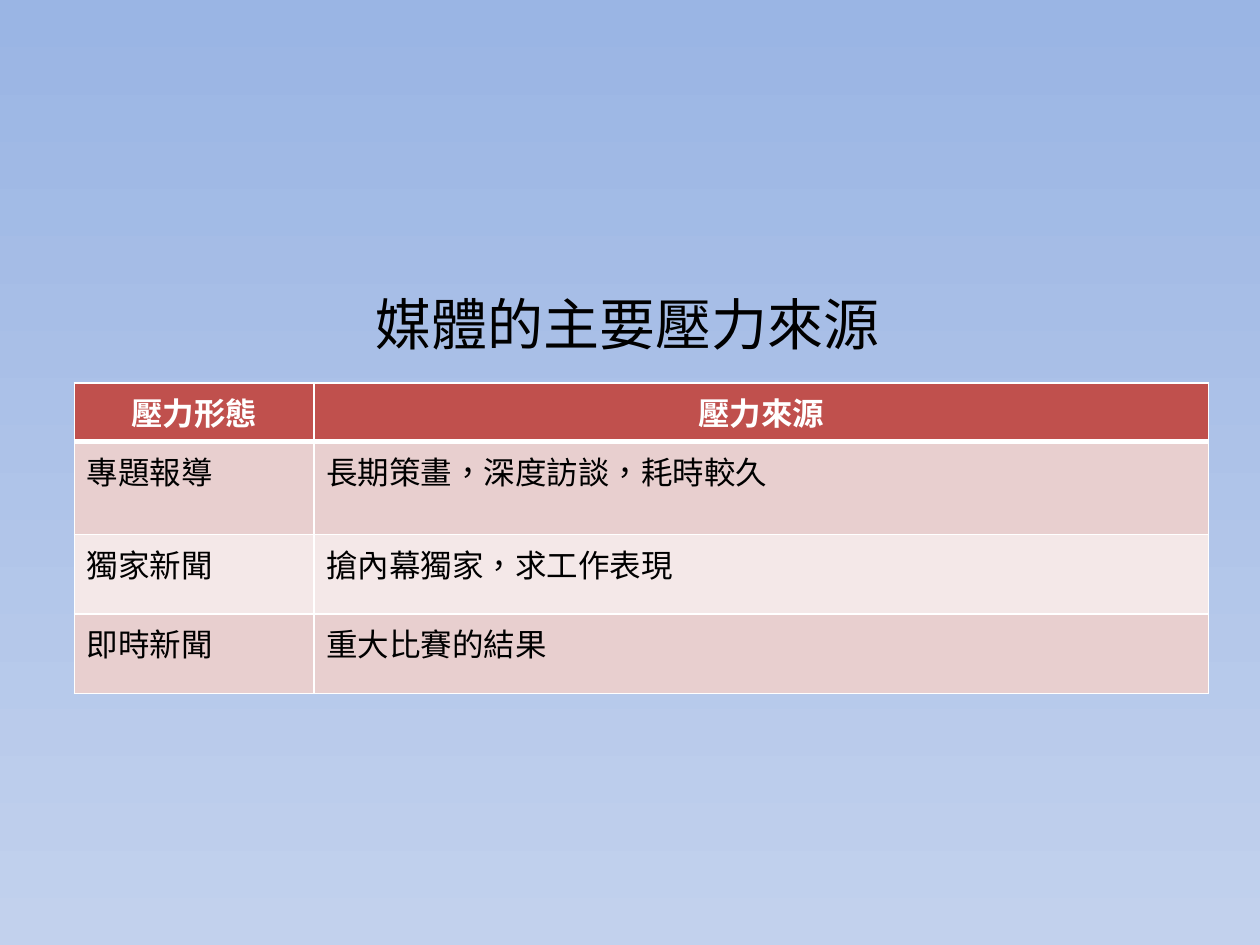
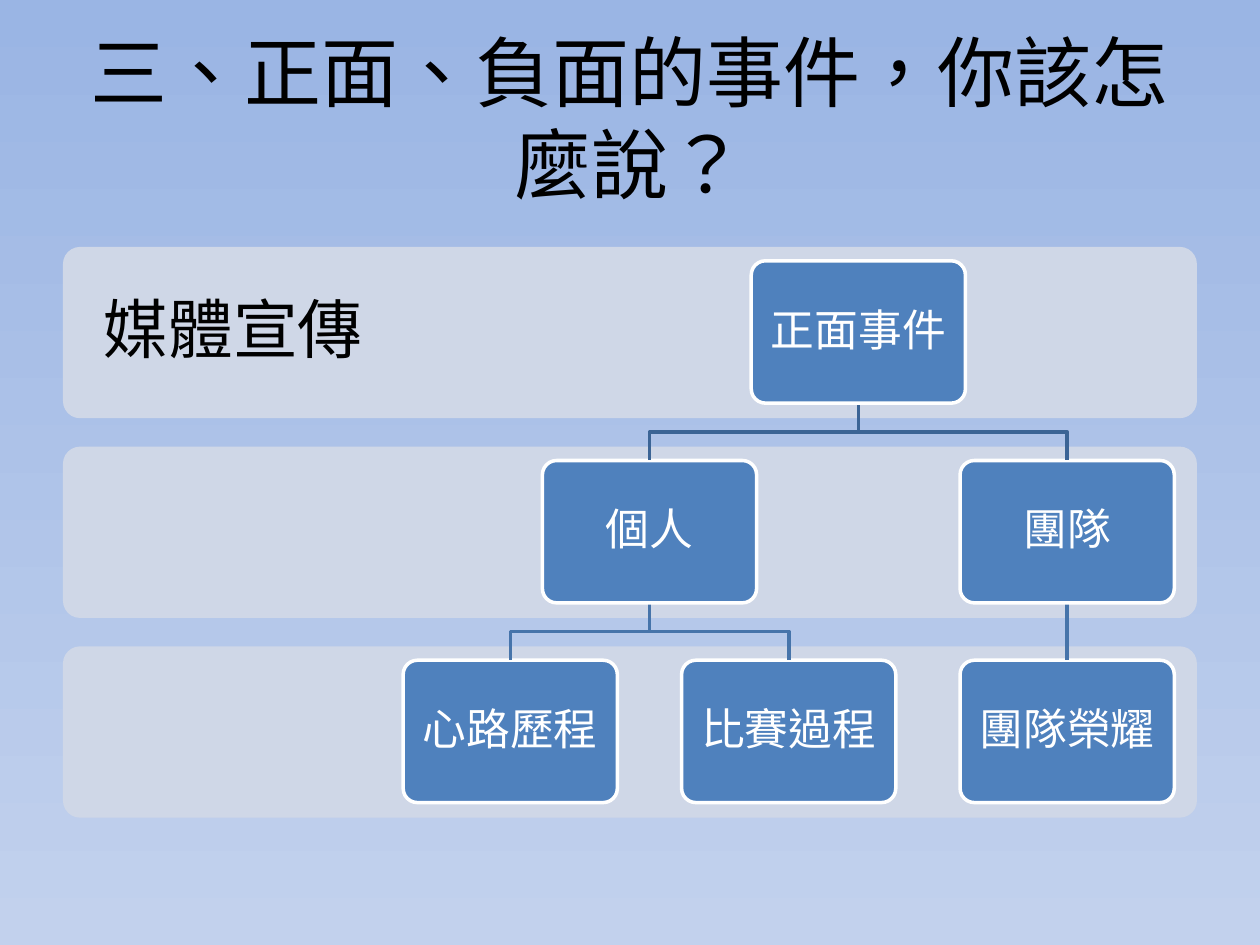
import pptx
import pptx.dml.color
import pptx.enum.lang
import pptx.enum.shapes
import pptx.enum.text
import pptx.util
from lxml import etree
from pptx.oxml.ns import qn

Inches = pptx.util.Inches
Align = pptx.enum.text.PP_ALIGN
Anchor = pptx.enum.text.MSO_ANCHOR
ShapeType = pptx.enum.shapes.MSO_SHAPE

BACKGROUND = ("9AB5E4", "C2D1ED")
WHITE, BLACK = "FFFFFF", "000000"
HEADER_FILL = "C0504D"
ROW_FILLS = ("E8CFCF", "F4E8E8")
BAND_FILL, NODE_FILL = "CFD7E7", "4F81BD"
BRANCH_COLOURS = ("3B6495", "4674AA")

SOURCES_TITLE = "媒體的主要壓力來源"
SOURCES = [
    ("壓力形態", "壓力來源"),
    ("專題報導", "長期策畫，深度訪談，耗時較久"),
    ("獨家新聞", "搶內幕獨家，求工作表現"),
    ("即時新聞", "重大比賽的結果"),
]
COLUMN_WIDTHS = (1.9, 7.1)
ROW_HEIGHTS = (0.46, 0.74, 0.63, 0.63)

EVENTS_TITLE = "三、正面、負面的事件，你該怎麼說？"
BAND_LABELS = ("媒體宣傳", None, None)
EVENT_TREE = ("正面事件", [
    ("個人", [("心路歷程", []), ("比賽過程", [])]),
    ("團隊", [("團隊榮耀", [])]),
])

BAND_LEFT, BAND_TOP, BAND_WIDTH, BAND_HEIGHT = 0.5, 1.96, 9, 1.36
LEVEL_STEP = 1.585
NODE_WIDTH, NODE_HEIGHT, NODE_INSET = 1.7, 1.13, 0.11
FIRST_LEAF, LEAF_STEP = 4.05, 2.21


def colour(value):
    """Return the colour for a hex string."""
    return pptx.dml.color.RGBColor.from_string(value)


def set_all(target, values):
    """Set every attribute named in a dict."""
    for name, value in values.items():
        setattr(target, name, value)


def write(frame, text, size, hex_colour, font="Calibri", bold=False,
          align=Align.CENTER, anchor=Anchor.MIDDLE, inset=0.1, spacing=1.0):
    """Write one formatted paragraph into a text frame."""
    set_all(frame, {
        "word_wrap": True, "auto_size": pptx.enum.text.MSO_AUTO_SIZE.NONE,
        "vertical_anchor": anchor,
        "margin_left": Inches(inset), "margin_right": Inches(inset),
        "margin_top": Inches(inset / 2), "margin_bottom": Inches(inset / 2),
    })
    write_paragraph(frame.paragraphs[0], text, size, hex_colour, font, bold, align, spacing)


def write_paragraph(paragraph, text, size, hex_colour, font, bold, align, spacing=1.0):
    """Add one formatted run to a paragraph."""
    set_all(paragraph, {"alignment": align, "line_spacing": spacing})
    run = paragraph.add_run()
    run.text = text
    set_all(run.font, {
        "name": font, "size": pptx.util.Pt(size), "bold": bold,
        "language_id": pptx.enum.lang.MSO_LANGUAGE_ID.TRADITIONAL_CHINESE,
    })
    run.font.color.rgb = colour(hex_colour)


def add_titled_slide(presentation, text, box, size, **formats):
    """Add a title-only slide with its title placed in a box."""
    slide = presentation.slides.add_slide(presentation.slide_layouts[5])
    title = slide.shapes.title
    set_all(title, dict(zip(("left", "top", "width", "height"), map(Inches, box))))
    write(title.text_frame, text, size, BLACK, **formats)
    return slide


def set_borders(cell, widths):
    """Draw white cell borders with a point width for each side."""
    properties = cell._tc.get_or_add_tcPr()
    for side, width in widths.items():
        line = etree.SubElement(properties, qn(f"a:ln{side}"), w=str(pptx.util.Pt(width)))
        fill = etree.SubElement(line, qn("a:solidFill"))
        etree.SubElement(fill, qn("a:srgbClr"), val=WHITE)


def add_sources_table(slide):
    """Add the table of pressure types and their sources."""
    table = slide.shapes.add_table(
        len(SOURCES), len(COLUMN_WIDTHS), Inches(0.59), Inches(3.04),
        Inches(sum(COLUMN_WIDTHS)), Inches(sum(ROW_HEIGHTS))).table
    for column, width in zip(table.columns, COLUMN_WIDTHS):
        column.width = Inches(width)
    for index, (row, height, texts) in enumerate(zip(table.rows, ROW_HEIGHTS, SOURCES)):
        row.height = Inches(height)
        header = index == 0
        for cell, text in zip(row.cells, texts):
            set_borders(cell, {"L": 1, "R": 1, "T": 3 if index == 1 else 1,
                               "B": 3 if header else 1})
            cell.fill.solid()
            cell.fill.fore_color.rgb = colour(
                HEADER_FILL if header else ROW_FILLS[(index - 1) % 2])
            write_paragraph(cell.text_frame.paragraphs[0], text, 18,
                            WHITE if header else BLACK, "Arial", header,
                            Align.CENTER if header else Align.LEFT)


def add_rounded_box(slide, left, top, width, height, fill):
    """Add a rounded rectangle without outline or shadow."""
    shape = slide.shapes.add_shape(
        ShapeType.ROUNDED_RECTANGLE, *map(Inches, (left, top, width, height)))
    shape.adjustments[0] = 0.1
    shape.shadow.inherit = False
    shape.fill.solid()
    shape.fill.fore_color.rgb = colour(fill)
    shape.line.fill.background()
    return shape


def set_line(shape, hex_colour):
    """Give a shape a two-point line."""
    shape.line.color.rgb = colour(hex_colour)
    shape.line.width = pptx.util.Pt(2)


def add_bands(slide):
    """Add one band for each tree level, with its label."""
    for level, label in enumerate(BAND_LABELS):
        top = BAND_TOP + level * LEVEL_STEP
        add_rounded_box(slide, BAND_LEFT, top, BAND_WIDTH, BAND_HEIGHT, BAND_FILL)
        if label:
            box = slide.shapes.add_textbox(
                *map(Inches, (BAND_LEFT, top, 2.7, BAND_HEIGHT)))
            write(box.text_frame, label, 37, BLACK, inset=0.29, spacing=0.9)


def add_branch(slide, start_x, start_y, end_x, end_y, hex_colour):
    """Join a node to its child by a straight or a bent line."""
    if start_x == end_x:
        branch = slide.shapes.add_connector(
            pptx.enum.shapes.MSO_CONNECTOR.STRAIGHT,
            *map(Inches, (start_x, start_y, end_x, end_y)))
        etree.SubElement(branch._element.spPr, qn("a:effectLst"))
    else:
        middle = (start_y + end_y) / 2
        builder = slide.shapes.build_freeform(Inches(start_x), Inches(start_y))
        builder.add_line_segments(
            [(Inches(x), Inches(y)) for x, y in
             ((start_x, middle), (end_x, middle), (end_x, end_y))], close=False)
        branch = builder.convert_to_shape()
        branch.shadow.inherit = False
        branch.fill.background()
    set_line(branch, hex_colour)


def add_tree(slide, node, leaf_centres, level=0):
    """Add a node above its children and return its centre."""
    text, children = node
    centres = [add_tree(slide, child, leaf_centres, level + 1) for child in children]
    centre = (centres[0] + centres[-1]) / 2 if centres else next(leaf_centres)
    top = BAND_TOP + NODE_INSET + level * LEVEL_STEP
    for child_centre in centres:
        add_branch(slide, centre, top + NODE_HEIGHT, child_centre, top + LEVEL_STEP,
                   BRANCH_COLOURS[level])
    shape = add_rounded_box(slide, centre - NODE_WIDTH / 2, top,
                            NODE_WIDTH, NODE_HEIGHT, NODE_FILL)
    set_line(shape, WHITE)
    write(shape.text_frame, text, 25, WHITE, spacing=0.9)
    return centre


def main():
    """Build both slides and save them."""
    presentation = pptx.Presentation()
    set_all(presentation, {"slide_width": Inches(10), "slide_height": Inches(7.5)})
    fill = presentation.slide_master.background.fill
    fill.gradient()
    fill.gradient_angle = 270
    for stop, value, position in zip(fill.gradient_stops, BACKGROUND, (0, 1)):
        stop.color.rgb = colour(value)
        stop.position = position

    sources_slide = add_titled_slide(
        presentation, SOURCES_TITLE, (2.88, 2.25, 4.24, 0.64), 32,
        align=Align.LEFT, anchor=Anchor.TOP)
    add_sources_table(sources_slide)

    events_slide = add_titled_slide(
        presentation, EVENTS_TITLE, (0.5, 0.3, 9, 1.25), 44, font="Arial")
    add_bands(events_slide)
    add_tree(events_slide, EVENT_TREE,
             iter([FIRST_LEAF + index * LEAF_STEP for index in range(3)]))
    presentation.save("out.pptx")


if __name__ == "__main__":
    main()
